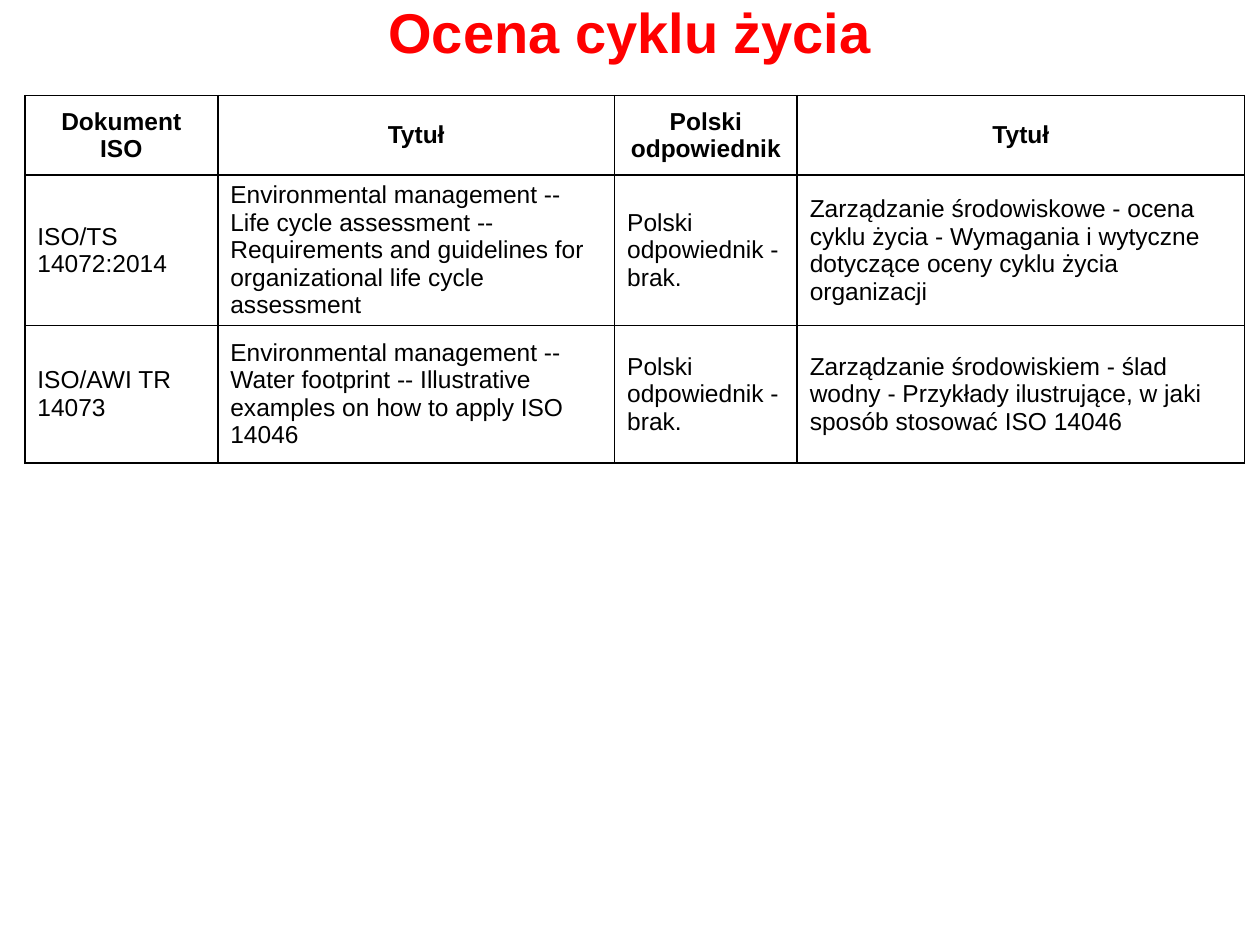
from lxml.etree import SubElement
from pptx import Presentation
from pptx.dml.color import RGBColor
from pptx.enum.text import MSO_ANCHOR, PP_ALIGN
from pptx.oxml.ns import qn
from pptx.util import Cm, Pt

COLOURS = {"title": "FF0000", "text": "000000", "border": "000000"}
FONT = "Arial"
COLUMN_WIDTHS = [3.89, 8, 3.68, 9.02]
ROW_HEIGHTS = [1.6, 2.77, 2.77]
NO_EQUIVALENT = "Polski odpowiednik - brak."
STANDARDS = [
    ["Dokument ISO", "Tytuł", "Polski odpowiednik", "Tytuł"],
    ["ISO/TS 14072:2014",
     "Environmental management -- Life cycle assessment -- Requirements and "
     "guidelines for organizational life cycle assessment",
     NO_EQUIVALENT,
     "Zarządzanie środowiskowe - ocena cyklu życia - Wymagania i wytyczne "
     "dotyczące oceny cyklu życia organizacji"],
    ["ISO/AWI TR 14073",
     "Environmental management -- Water footprint -- Illustrative examples "
     "on how to apply ISO 14046",
     NO_EQUIVALENT,
     "Zarządzanie środowiskiem - ślad wodny - Przykłady ilustrujące, w jaki "
     "sposób stosować ISO 14046"],
]


def add_run(paragraph, text, size, colour, bold):
    run = paragraph.add_run()
    run.text = text
    run.font.name = FONT
    run.font.size = Pt(size)
    run.font.bold = bold
    run.font.color.rgb = RGBColor.from_string(COLOURS[colour])


def set_title(slide, text):
    title = slide.shapes.title
    title.left, title.top = Cm(1.27), Cm(-0.08)
    title.width, title.height = Cm(22.86), Cm(1.4)
    title.text_frame.vertical_anchor = MSO_ANCHOR.MIDDLE
    paragraph = title.text_frame.paragraphs[0]
    paragraph.alignment = PP_ALIGN.CENTER
    add_run(paragraph, text, 32, "title", True)


def set_borders(cell):
    properties = cell._tc.get_or_add_tcPr()
    for position, side in enumerate(("a:lnL", "a:lnR", "a:lnT", "a:lnB")):
        line = properties.makeelement(qn(side), {"w": str(Pt(1))})
        fill = SubElement(line, qn("a:solidFill"))
        SubElement(fill, qn("a:srgbClr"), val=COLOURS["border"])
        # Borders come before the cell fill
        properties.insert(position, line)


def fill_cell(cell, text, is_header):
    cell.fill.background()
    cell.vertical_anchor = MSO_ANCHOR.MIDDLE
    paragraph = cell.text_frame.paragraphs[0]
    paragraph.alignment = PP_ALIGN.CENTER if is_header else PP_ALIGN.LEFT
    add_run(paragraph, text, 14, "text", is_header)
    set_borders(cell)


def add_standards_table(slide):
    frame = slide.shapes.add_table(
        len(STANDARDS), len(COLUMN_WIDTHS), Cm(0.5), Cm(1.93),
        Cm(sum(COLUMN_WIDTHS)), Cm(sum(ROW_HEIGHTS)))
    table = frame.table
    table.horz_banding = False
    for column, width in zip(table.columns, COLUMN_WIDTHS):
        column.width = Cm(width)
    for row_index, (row, height) in enumerate(zip(table.rows, ROW_HEIGHTS)):
        row.height = Cm(height)
        for cell, text in zip(row.cells, STANDARDS[row_index]):
            fill_cell(cell, text, row_index == 0)


def main():
    presentation = Presentation()
    presentation.slide_width, presentation.slide_height = Cm(25.4), Cm(19.05)
    # Layout 5 holds only a title
    slide = presentation.slides.add_slide(presentation.slide_layouts[5])
    set_title(slide, "Ocena cyklu życia")
    add_standards_table(slide)
    presentation.save("out.pptx")


if __name__ == "__main__":
    main()
